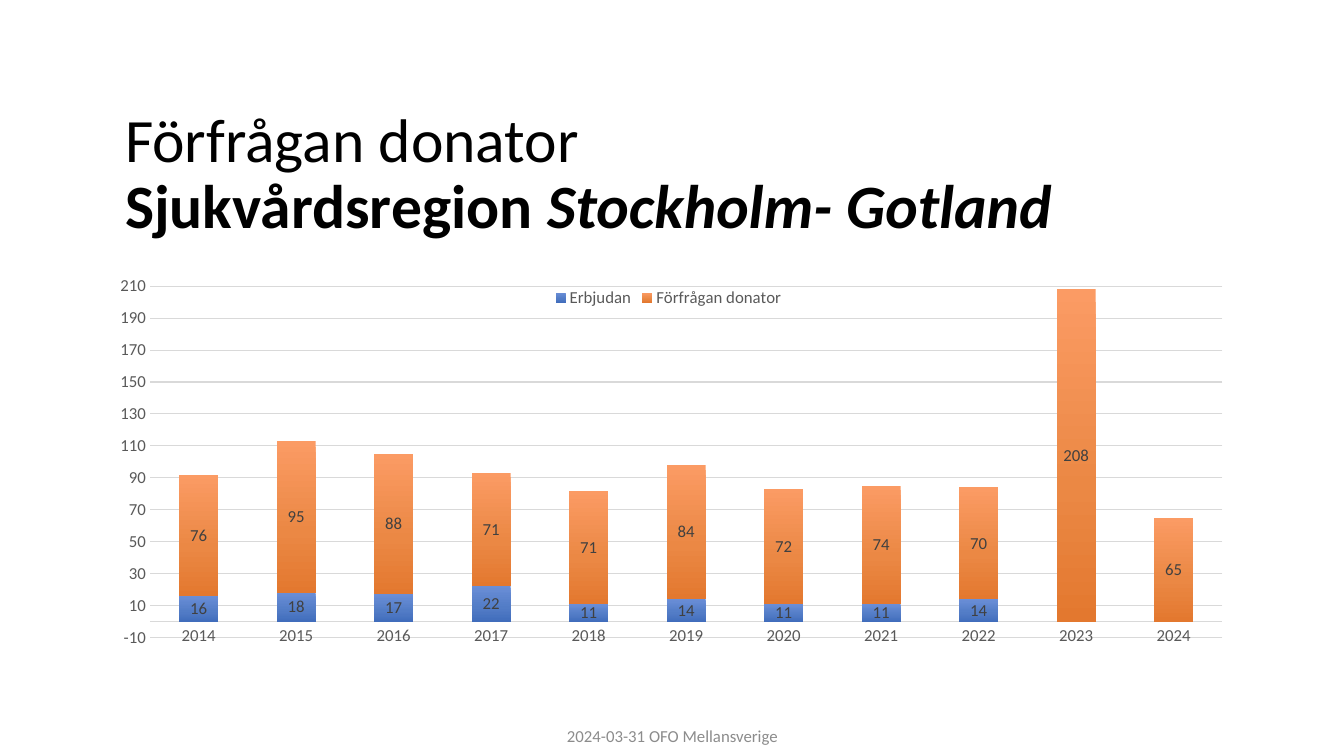
from pptx import Presentation
from pptx.chart.data import CategoryChartData
from pptx.dml.color import RGBColor
from pptx.enum.chart import XL_CHART_TYPE, XL_LABEL_POSITION, XL_LEGEND_POSITION, XL_TICK_MARK
from pptx.enum.text import MSO_ANCHOR, MSO_AUTO_SIZE, PP_ALIGN
from pptx.oxml import parse_xml
from pptx.oxml.ns import nsdecls, qn
from pptx.util import Inches, Pt

FONT = "Calibri"
TITLE_LINES = [
    [("Förfrågan donator", {})],
    [("Sjukvårdsregion ", {"bold": True}),
     ("Stockholm- Gotland", {"bold": True, "italic": True})],
]
FOOTER = "2024-03-31 OFO Mellansverige"
YEARS = [str(year) for year in range(2014, 2025)]
SERIES = [
    ("Erbjudan", [16, 18, 17, 22, 11, 14, 11, 11, 14, None, None],
     ["6A8ED7", "527CC6", "416DBC"]),
    ("Förfrågan donator", [76, 95, 88, 71, 71, 84, 72, 74, 70, 208, 65],
     ["FB9B64", "EB8844", "E3782F"]),
]
GRADIENT_STOPS = [0, 60, 100]
PLOT_AREA = {"x": 0.044, "y": 0.024, "w": 0.943, "h": 0.857}
TITLE_BOX = (1.14, 0.89, 11.13, 1.7)
CHART_BOX = (0.99, 2.74, 11.28, 4.07)
FOOTER_BOX = (4.42, 7.1, 4.5, 0.4)


def color(value):
    return RGBColor.from_string(value)


def style(font, size, value, **formats):
    font.color.rgb = color(value)
    for name, setting in {"name": FONT, "size": Pt(size), **formats}.items():
        setattr(font, name, setting)


def box(lengths):
    return [Inches(length) for length in lengths]


def add_title(slide):
    title = slide.shapes.title
    for name, length in zip(("left", "top", "width", "height"), box(TITLE_BOX)):
        setattr(title, name, length)
    frame = title.text_frame
    frame.vertical_anchor = MSO_ANCHOR.MIDDLE
    frame.auto_size = MSO_AUTO_SIZE.NONE
    paragraph = frame.paragraphs[0]
    paragraph.alignment = PP_ALIGN.LEFT
    paragraph.line_spacing = 0.9
    for index, line in enumerate(TITLE_LINES):
        if index:
            paragraph.add_line_break()
        for text, formats in line:
            run = paragraph.add_run()
            run.text = text
            style(run.font, 44, "000000", **formats)


def add_footer(slide):
    frame = slide.shapes.add_textbox(*box(FOOTER_BOX)).text_frame
    frame.word_wrap = True
    frame.vertical_anchor = MSO_ANCHOR.MIDDLE
    paragraph = frame.paragraphs[0]
    paragraph.alignment = PP_ALIGN.CENTER
    paragraph.space_after = Pt(6)
    run = paragraph.add_run()
    run.text = FOOTER
    style(run.font, 12, "8C8C8C")


def set_gradient(series, colors):
    stops = "".join(
        f'<a:gs pos="{position * 1000}"><a:srgbClr val="{value}"/></a:gs>'
        for position, value in zip(GRADIENT_STOPS, colors))
    series.format.fill.gradient()
    properties = series._element.find(qn("c:spPr"))
    properties.replace(properties.find(qn("a:gradFill")), parse_xml(
        f'<a:gradFill {nsdecls("a")} rotWithShape="1"><a:gsLst>{stops}</a:gsLst>'
        '<a:lin ang="5400000" scaled="0"/></a:gradFill>'))


def set_plot_area(chart):
    area = chart._chartSpace.chart.plotArea
    for layout in area.findall(qn("c:layout")):
        area.remove(layout)
    modes = '<c:xMode val="edge"/><c:yMode val="edge"/>'
    shares = "".join(f'<c:{key} val="{share}"/>' for key, share in PLOT_AREA.items())
    area.insert(0, parse_xml(
        f'<c:layout {nsdecls("c")}><c:manualLayout><c:layoutTarget val="inner"/>'
        f'{modes}{shares}</c:manualLayout></c:layout>'))


def add_donor_chart(slide):
    data = CategoryChartData()
    data.categories = YEARS
    for name, values, _ in SERIES:
        data.add_series(name, values)
    chart = slide.shapes.add_chart(
        XL_CHART_TYPE.COLUMN_STACKED, *box(CHART_BOX), data).chart
    style(chart.font, 10, "000000")
    chart.has_title = False
    chart.has_legend = True
    chart.legend.position = XL_LEGEND_POSITION.TOP
    chart.legend.include_in_layout = True
    style(chart.legend.font, 12, "595959")

    for axis in (chart.category_axis, chart.value_axis):
        axis.major_tick_mark = axis.minor_tick_mark = XL_TICK_MARK.NONE
        style(axis.tick_labels.font, 12, "595959")
    years_line = chart.category_axis.format.line
    grid_line = chart.value_axis.major_gridlines.format.line
    for line, width in ((years_line, 1), (grid_line, 0.75)):
        line.color.rgb = color("D9D9D9")
        line.width = Pt(width)
    scale = {"minimum_scale": -10, "maximum_scale": 210, "major_unit": 20}
    for name, setting in scale.items():
        setattr(chart.value_axis, name, setting)
    chart.value_axis.format.line.fill.background()

    plot = chart.plots[0]
    plot.gap_width = 150
    plot.overlap = 100
    plot.vary_by_categories = False
    for series, (_, _, colors) in zip(plot.series, SERIES):
        set_gradient(series, colors)
        labels = series.data_labels
        labels.show_value = True
        labels.position = XL_LABEL_POSITION.CENTER
        style(labels.font, 12, "404040")
    set_plot_area(chart)


def main():
    presentation = Presentation()
    presentation.slide_width = Inches(13.33)
    presentation.slide_height = Inches(7.5)
    slide = presentation.slides.add_slide(presentation.slide_layouts[5])
    add_title(slide)
    add_donor_chart(slide)
    add_footer(slide)
    presentation.save("out.pptx")


if __name__ == "__main__":
    main()
